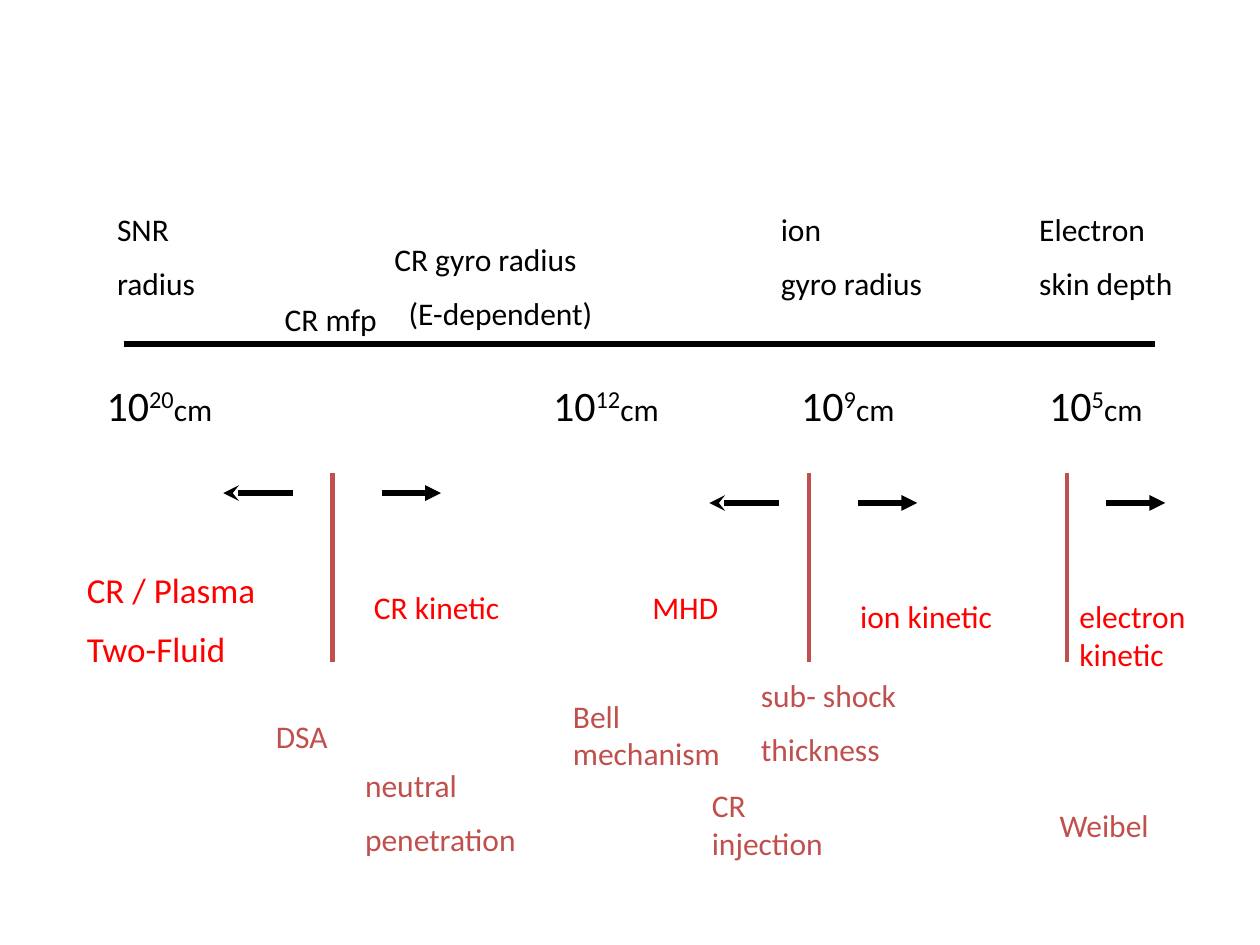
from dataclasses import dataclass

from pptx import Presentation
from pptx.dml.color import RGBColor
from pptx.enum.shapes import MSO_CONNECTOR
from pptx.enum.text import MSO_AUTO_SIZE
from pptx.oxml.ns import qn
from pptx.util import Cm, Pt
from lxml.etree import SubElement


@dataclass(frozen=True)
class Theme:
    font: str = "Calibri"
    black: RGBColor = RGBColor(0, 0, 0)
    red: RGBColor = RGBColor(0xFF, 0, 0)
    brick: RGBColor = RGBColor(0xC0, 0x50, 0x4D)
    body: int = 18
    lead: int = 20
    power: int = 24
    axis_width: float = 3.5
    arrow_width: float = 3
    boundary_width: float = 2.75


THEME = Theme()
ONE_LINE, WRAPPED, TWO_LINES = 1.02, 1.78, 2.16


@dataclass(frozen=True)
class Box:
    """Region whose parts are placed in centimetres from its top left."""
    left: float
    top: float

    def at(self, x, y):
        return Cm(self.left + x), Cm(self.top + y)


def add_frame(slide, box, x, y, width, height):
    frame = slide.shapes.add_textbox(*box.at(x, y), Cm(width), Cm(height)).text_frame
    frame.word_wrap = True
    frame.auto_size = MSO_AUTO_SIZE.SHAPE_TO_FIT_TEXT
    return frame


def set_font(font, size, color):
    font.name = THEME.font
    font.size = Pt(size)
    font.color.rgb = color


def add_label(slide, box, lines, x, y, width, height, color, size=THEME.body):
    """Add one paragraph per line, set apart by half the type size."""
    frame = add_frame(slide, box, x, y, width, height)
    for index, line in enumerate(lines):
        paragraph = frame.add_paragraph() if index else frame.paragraphs[0]
        paragraph.text = line
        set_font(paragraph.font, size, color)
        if index:
            paragraph.space_before = Pt(size / 2)
    return frame


def add_power(slide, box, exponent, x, y, width):
    """Add a length written as a power of ten in cm."""
    paragraph = add_frame(slide, box, x, y, width, 1.27).paragraphs[0]
    set_font(paragraph.font, THEME.power, THEME.black)
    base, raised, unit = (paragraph.add_run() for _ in range(3))
    base.text, raised.text, unit.text = "10", exponent, "cm"
    raised.font._element.set("baseline", "30000")
    unit.font.size = Pt(THEME.body)


def add_line(slide, box, start, end, color, width, head=None):
    line = slide.shapes.add_connector(MSO_CONNECTOR.STRAIGHT, *box.at(*start), *box.at(*end))
    line.line.color.rgb = color
    line.line.width = Pt(width)
    if head:
        SubElement(line.line._get_or_add_ln(), qn("a:tailEnd"), type=head)
    SubElement(line._element.spPr, qn("a:effectLst"))


def add_length_scale(slide, box):
    add_line(slide, box, (0.99, 2.82), (21.79, 2.82), THEME.black, THEME.axis_width)
    for exponent, x, width in (("20", 0.4, 3.61), ("12", 9.4, 3), ("9", 14.4, 2.79), ("5", 19.4, 3)):
        add_power(slide, box, exponent, x, 3.41, width)
    for lines, x, width in (
        (("SNR", "radius"), 0.61, 3),
        (("ion", "gyro radius"), 13.99, 4.19),
        (("Electron", "skin depth"), 19.2, 4.01),
    ):
        add_label(slide, box, lines, x, 0, width, TWO_LINES, THEME.black)
    add_label(slide, box, ["CR mfp"], 3.99, 1.81, 3.99, ONE_LINE, THEME.black)
    gyro = add_label(slide, box, ["CR gyro radius", "(E-dependent)"],
                     6.2, 0.61, 5.41, TWO_LINES, THEME.black)
    gyro.paragraphs[1]._p.get_or_add_pPr().set("marL", str(Cm(0.29)))


def add_regimes(slide, box):
    """Add the boundaries, the arrows leading away from them and the regime names."""
    for x, arrow_y, left_gap, right_gap in (
        (5.21, 0.41, 0.81, 0.99),
        (14.81, 0.61, 0.61, 0.99),
        (20.01, 0.61, None, 0.79),
    ):
        add_line(slide, box, (x, 0), (x, 3.81), THEME.brick, THEME.boundary_width)
        if left_gap:
            start = x - left_gap
            add_line(slide, box, (start, arrow_y), (start - 1.4, arrow_y),
                     THEME.black, THEME.arrow_width, "stealth")
        start = x + right_gap
        add_line(slide, box, (start, arrow_y), (start + 1.19, arrow_y),
                 THEME.black, THEME.arrow_width, "triangle")
    add_label(slide, box, ["CR / Plasma", "Two-Fluid"], 0, 1.8, 4.8, 2.36, THEME.red, THEME.lead)
    for name, x, y, width, height in (
        ("CR kinetic", 5.79, 2.2, 3.81, ONE_LINE),
        ("MHD", 11.4, 2.2, 2.01, ONE_LINE),
        ("ion kinetic", 15.59, 2.38, 3.2, WRAPPED),
        ("electron kinetic", 20.01, 2.38, 3, WRAPPED),
    ):
        add_label(slide, box, [name], x, y, width, height, THEME.red)


def add_processes(slide, box):
    for lines, x, y, width, height in (
        (["DSA"], 0, 0.82, 2.95, ONE_LINE),
        (["neutral", "penetration"], 1.8, 1.81, 4.19, TWO_LINES),
        (["Bell mechanism"], 5.99, 0.41, 4.01, WRAPPED),
        (["sub- shock", "thickness"], 9.78, 0, 4.39, TWO_LINES),
        (["CR injection"], 8.79, 2.21, 3.2, WRAPPED),
        (["Weibel"], 15.8, 2.62, 2.59, ONE_LINE),
    ):
        add_label(slide, box, lines, x, y, width, height, THEME.brick)


def main():
    deck = Presentation()
    deck.slide_width, deck.slide_height = Cm(25.4), Cm(19.05)
    slide = deck.slides.add_slide(deck.slide_layouts[6])
    add_length_scale(slide, Box(1.5, 4.11))
    add_regimes(slide, Box(1.5, 9.53))
    add_processes(slide, Box(5.31, 13.51))
    deck.save("out.pptx")


if __name__ == "__main__":
    main()
